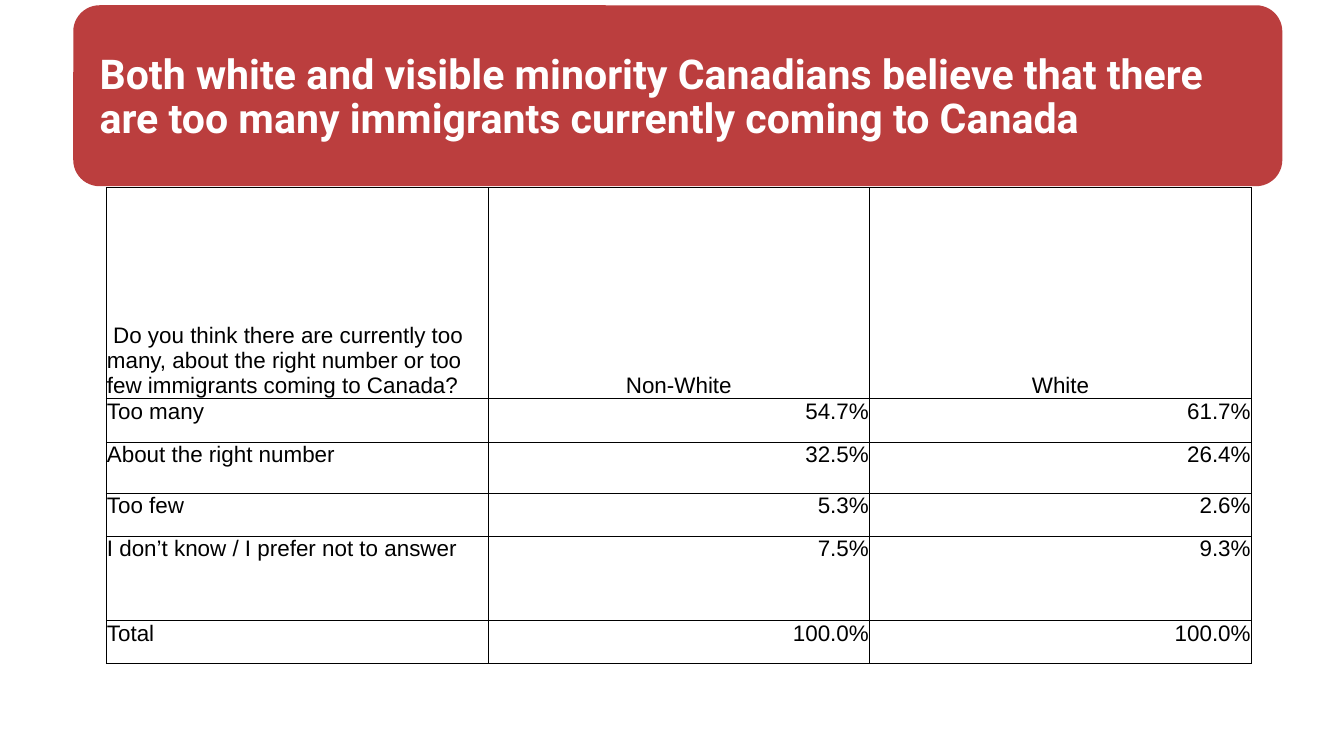
from pptx import Presentation
from pptx.dml.color import RGBColor
from pptx.enum.shapes import MSO_SHAPE
from pptx.enum.text import MSO_ANCHOR, MSO_AUTO_SIZE, PP_ALIGN
from pptx.oxml import parse_xml
from pptx.oxml.ns import nsdecls
from pptx.util import Cm, Pt

# Content
TITLE = ("Both white and visible minority Canadians believe that there "
         "are too many immigrants currently coming to Canada")
ROWS = [
    (" Do you think there are currently too many, about the right number "
     "or too few immigrants coming to Canada?", "Non-White", "White"),
    ("Too many", "54.7%", "61.7%"),
    ("About the right number", "32.5%", "26.4%"),
    ("Too few", "5.3%", "2.6%"),
    ("I don’t know / I prefer not to answer", "7.5%", "9.3%"),
    ("Total", "100.0%", "100.0%"),
]
ROW_HEIGHTS = [7.98, 1.63, 1.93, 1.63, 3.2, 1.63]
COL_WIDTH = 14.43

# Formats
RED = RGBColor(0xBB, 0x3E, 0x3E)
WHITE = RGBColor(0xFF, 0xFF, 0xFF)
BLACK = RGBColor(0, 0, 0)
TITLE_FONT = {"name": "Roboto", "size": Pt(44), "bold": True}
CELL_FONT = {"name": "Arial", "size": Pt(24), "bold": False}
CELL_MARGINS = {"margin_left": Cm(0.03), "margin_top": Cm(0.03),
                "margin_right": Cm(0.03), "margin_bottom": 0}


def set_all(obj, values):
    for name, value in values.items():
        setattr(obj, name, value)


def add_borders(cell):
    tcPr = cell._tc.get_or_add_tcPr()
    for i, side in enumerate(("lnL", "lnR", "lnT", "lnB")):
        tcPr.insert(i, parse_xml(
            f'<a:{side} {nsdecls("a")} w="{Pt(0.5)}"><a:solidFill>'
            f'<a:srgbClr val="{BLACK}"/></a:solidFill></a:{side}>'))


prs = Presentation()
prs.slide_width, prs.slide_height = Cm(50.8), Cm(28.58)
s = prs.slides.add_slide(prs.slide_layouts[5])

# Red banner, behind the title
banner = s.shapes.add_shape(MSO_SHAPE.ROUNDED_RECTANGLE,
                            Cm(2.77), Cm(0.2), Cm(45.7), Cm(6.84))
banner.adjustments[0] = 0.145
banner.shadow.inherit = False
banner.fill.solid()
banner.fill.fore_color.rgb = RED
banner.line.fill.background()
s.shapes._spTree.insert(2, banner._element)

# Title
title = s.shapes.title
set_all(title, {"left": Cm(3.51), "top": Cm(0.94),
                "width": Cm(43.82), "height": Cm(5.54)})
tf = title.text_frame
tf.text = TITLE
set_all(tf, {"word_wrap": True, "auto_size": MSO_AUTO_SIZE.NONE,
             "vertical_anchor": MSO_ANCHOR.MIDDLE})
p = tf.paragraphs[0]
set_all(p, {"alignment": PP_ALIGN.LEFT, "line_spacing": 0.9})
r = p.runs[0]
set_all(r.font, TITLE_FONT)
r.font.color.rgb = WHITE

# Table of answers
n_cols = len(ROWS[0])
table = s.shapes.add_table(len(ROWS), n_cols, Cm(4.01), Cm(7.09),
                           Cm(COL_WIDTH * n_cols), Cm(sum(ROW_HEIGHTS))).table
set_all(table, {"first_row": False, "horz_banding": False})
for col in table.columns:
    col.width = Cm(COL_WIDTH)
for i, (texts, height) in enumerate(zip(ROWS, ROW_HEIGHTS)):
    table.rows[i].height = Cm(height)
    value_align = PP_ALIGN.RIGHT if i else PP_ALIGN.CENTER
    for j, text in enumerate(texts):
        cell = table.cell(i, j)
        cell.text = text
        set_all(cell, CELL_MARGINS)
        cell.vertical_anchor = MSO_ANCHOR.TOP if i else MSO_ANCHOR.BOTTOM
        cell.fill.background()
        add_borders(cell)
        p = cell.text_frame.paragraphs[0]
        p.alignment = value_align if j else PP_ALIGN.LEFT
        r = p.runs[0]
        set_all(r.font, CELL_FONT)
        r.font.color.rgb = BLACK

prs.save("out.pptx")
